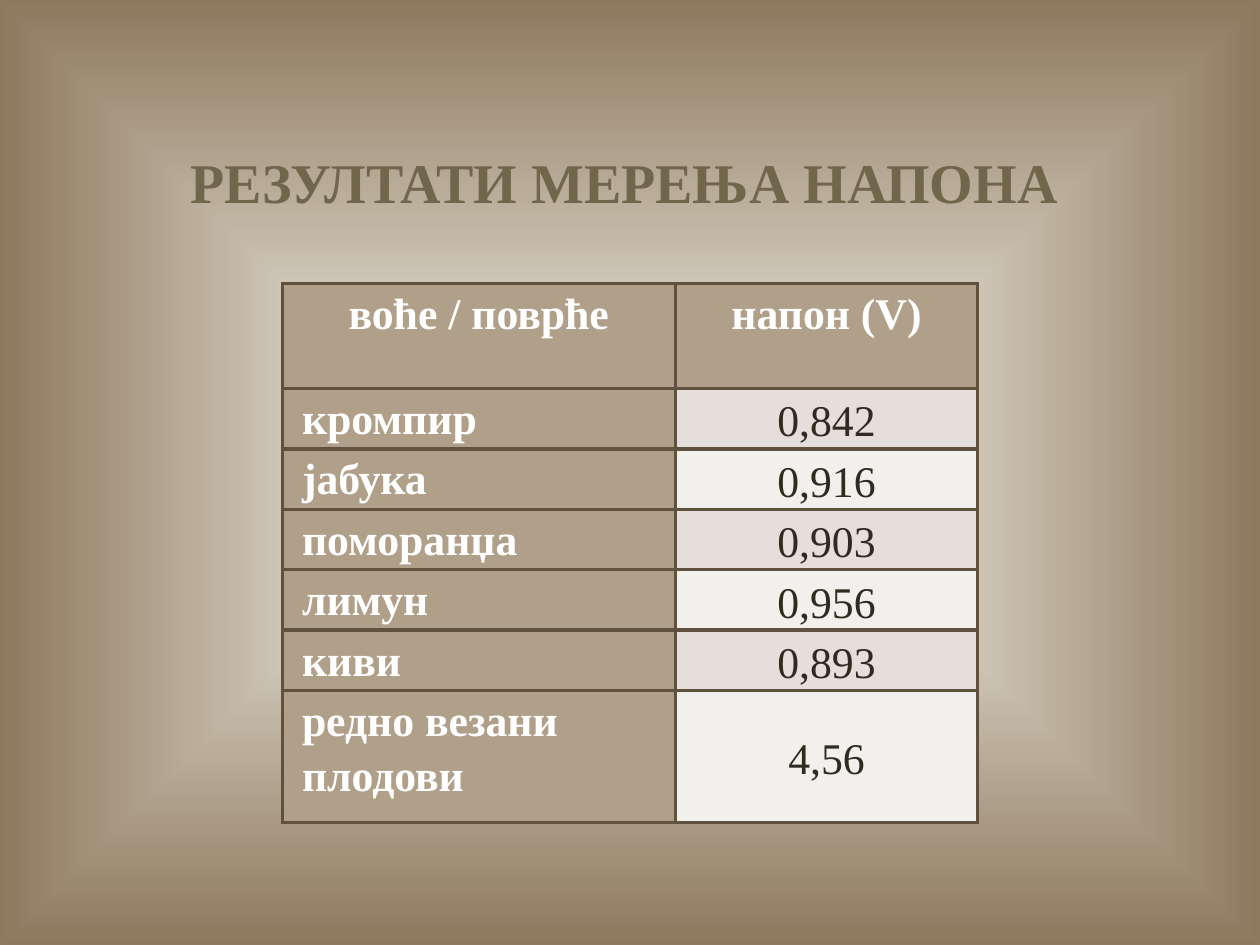
import pptx
import pptx.util
import pptx.dml.color
import pptx.enum.text
import pptx.oxml
import pptx.oxml.ns
from lxml import etree

Pt = pptx.util.Pt
RGBColor = pptx.dml.color.RGBColor
Align = pptx.enum.text.PP_ALIGN
Anchor = pptx.enum.text.MSO_ANCHOR
qn = pptx.oxml.ns.qn

CREAM = RGBColor(0xF9, 0xF8, 0xF1)
BROWN = RGBColor(0x8E, 0x79, 0x5E)
OLIVE = RGBColor(0x6F, 0x66, 0x4C)
WHITE = RGBColor(0xFF, 0xFF, 0xFF)
INK = RGBColor(0x2F, 0x2B, 0x20)
TAN = RGBColor(0xB1, 0xA0, 0x89)
BORDER = RGBColor(0x5F, 0x51, 0x3E)
BANDS = (RGBColor(0xE4, 0xDF, 0xDA), RGBColor(0xF2, 0xF0, 0xED))

HEADINGS = ("воће / поврће", "напон (V)")
VOLTAGES = (
    ("кромпир", "0,842"),
    ("јабука", "0,916"),
    ("поморанџа", "0,903"),
    ("лимун", "0,956"),
    ("киви", "0,893"),
    ("редно везани\nплодови", "4,56"),
)
COLUMN_WIDTHS = (224.6, 172.8)
ROW_HEIGHTS = (60, 31.7, 31.7, 29.5, 31.7, 31.7, 75.6)


class SlideBuilder:
    font_name = "Times New Roman"
    title_size = Pt(32)
    cell_size = Pt(25)
    cell_margin = 5
    name_margin = 11.3
    border_width = Pt(2.25)

    def __init__(self, slide):
        self.slide = slide

    def background(self, center, edge):
        """Fill the background with a gradient running from the centre outwards."""
        fill = self.slide.background.fill
        fill.gradient()
        for stop, color in zip(fill.gradient_stops, (center, edge)):
            stop.color.rgb = color
        linear = self.slide.element.find(".//" + qn("a:lin"))
        outward = etree.Element(qn("a:path"), path="shape")
        etree.SubElement(outward, qn("a:fillToRect"),
                         {side: "50000" for side in "ltrb"})
        linear.getparent().replace(linear, outward)

    def style(self, paragraph, size, color, bold, align):
        paragraph.alignment = align
        font = paragraph.font
        font.name, font.size, font.bold = self.font_name, size, bold
        font.color.rgb = color

    def title(self, text, left, top, width, height):
        frame = self.slide.shapes.add_textbox(
            Pt(left), Pt(top), Pt(width), Pt(height)).text_frame
        frame.word_wrap = True
        frame.vertical_anchor = Anchor.MIDDLE
        frame.text = text
        self.style(frame.paragraphs[0], self.title_size, OLIVE, True, Align.CENTER)

    def table(self, left, top, column_widths, row_heights):
        table = self.slide.shapes.add_table(
            len(row_heights), len(column_widths), Pt(left), Pt(top),
            Pt(sum(column_widths)), Pt(sum(row_heights))).table
        for column, width in zip(table.columns, column_widths):
            column.width = Pt(width)
        for row, height in zip(table.rows, row_heights):
            row.height = Pt(height)
        return table

    def borders(self, cell):
        properties = cell._tc.get_or_add_tcPr()
        for side in ("lnL", "lnR", "lnT", "lnB"):
            line = etree.SubElement(properties, qn("a:" + side),
                                    w=str(self.border_width))
            solid = etree.SubElement(line, qn("a:solidFill"))
            etree.SubElement(solid, qn("a:srgbClr"), val=str(BORDER))

    def cell(self, cell, text, fill, color=WHITE, bold=True,
             align=Align.CENTER, anchor=Anchor.TOP, margin=cell_margin):
        self.borders(cell)
        cell.fill.solid()
        cell.fill.fore_color.rgb = fill
        cell.margin_left, cell.margin_right = Pt(margin), Pt(self.cell_margin)
        cell.margin_top = cell.margin_bottom = 0
        cell.vertical_anchor = anchor
        cell.text = text
        for paragraph in cell.text_frame.paragraphs:
            paragraph.line_spacing = 1.15
            self.style(paragraph, self.cell_size, color, bold, align)


def main():
    presentation = pptx.Presentation()
    presentation.slide_width, presentation.slide_height = Pt(720), Pt(540)
    builder = SlideBuilder(
        presentation.slides.add_slide(presentation.slide_layouts[6]))

    builder.background(CREAM, BROWN)
    builder.title("РЕЗУЛТАТИ МЕРЕЊА НАПОНА", 76.3, 67, 560.9, 72.7)

    results = builder.table(161.3, 162, COLUMN_WIDTHS, ROW_HEIGHTS)
    for column, heading in enumerate(HEADINGS):
        builder.cell(results.cell(0, column), heading, TAN)
    for row, (produce, voltage) in enumerate(VOLTAGES, start=1):
        builder.cell(results.cell(row, 0), produce, TAN,
                     align=Align.LEFT, margin=builder.name_margin)
        builder.cell(results.cell(row, 1), voltage, BANDS[(row - 1) % 2],
                     color=INK, bold=False, anchor=Anchor.MIDDLE)

    presentation.save("out.pptx")


if __name__ == "__main__":
    main()
